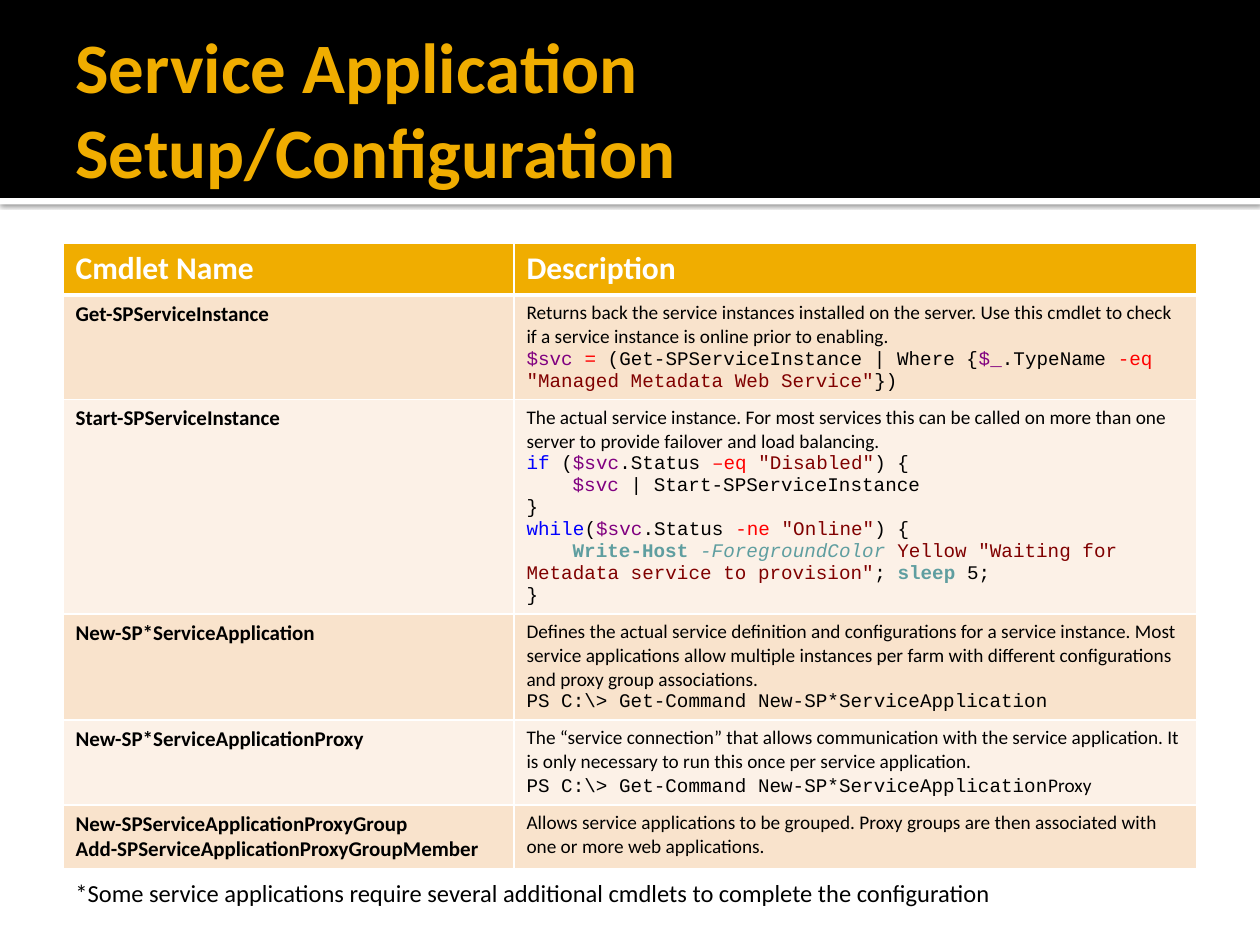
import pptx
import pptx.dml.color
import pptx.enum.shapes
import pptx.enum.text
import pptx.oxml
import pptx.oxml.ns
import pptx.util
from pptx.util import Cm

GOLD, WHITE, BLACK = "F0AD00", "FFFFFF", "000000"
BANDS = ("F9E3CC", "FCF1E7")
CODE_INDENT = Cm(0.93)  # four characters of 11 pt code

# Kinds of text: font, size, bold, italic, colour
KINDS = {
    "title": ("Calibri", 40.5, True, False, GOLD),
    "head": ("Calibri", 18, True, False, WHITE),
    "name": ("Calibri", 12, True, False, BLACK),
    "prose": ("Calibri", 11, False, False, BLACK),
    "note": ("Calibri", 14, False, False, BLACK),
    "code": ("Courier New", 11, False, False, BLACK),
    "variable": ("Courier New", 11, False, False, "800080"),
    "operator": ("Courier New", 11, False, False, "FF0000"),
    "string": ("Courier New", 11, False, False, "800000"),
    "keyword": ("Courier New", 11, False, False, "0000FF"),
    "command": ("Courier New", 11, True, False, "5F9EA0"),
    "option": ("Courier New", 11, False, True, "5F9EA0"),
}

# Each row: cmdlet names, then description lines made of (kind, text) spans;
# a line that starts with None is indented
ROWS = [
    (["Get-SPServiceInstance"], [
        [("prose", "Returns back the service instances installed on the server. "
                   "Use this cmdlet to check if a service instance is online prior to enabling.")],
        [("variable", "$svc "), ("operator", "="),
         ("code", " (Get-SPServiceInstance | Where {"), ("variable", "$_"),
         ("code", ".TypeName "), ("operator", "-eq "),
         ("string", '"Managed Metadata Web Service"'), ("code", "})")],
    ]),
    (["Start-SPServiceInstance"], [
        [("prose", "The actual service instance. For most services this can be called "
                   "on more than one server to provide failover and load balancing.")],
        [("keyword", "if "), ("code", "("), ("variable", "$svc"), ("code", ".Status "),
         ("operator", "–eq "), ("string", '"Disabled"'), ("code", ") {")],
        [None, ("variable", "$svc"), ("code", " | Start-SPServiceInstance")],
        [("code", "}")],
        [("keyword", "while"), ("code", "("), ("variable", "$svc"), ("code", ".Status "),
         ("operator", "-ne "), ("string", '"Online"'), ("code", ") {")],
        [None, ("command", "Write-Host "), ("option", "-ForegroundColor "),
         ("string", 'Yellow "Waiting for Metadata service to provision"'),
         ("code", "; "), ("command", "sleep"), ("code", " 5;")],
        [("code", "}")],
    ]),
    (["New-SP*ServiceApplication"], [
        [("prose", "Defines the actual service definition and configurations for a service "
                   "instance. Most service applications allow multiple instances per farm "
                   "with different configurations and proxy group associations.")],
        [("code", "PS C:\\> Get-Command New-SP*ServiceApplication")],
    ]),
    (["New-SP*ServiceApplicationProxy"], [
        [("prose", "The “service connection” that allows communication with the service "
                   "application. It is only necessary to run this once per service application.")],
        [("code", "PS C:\\> Get-Command New-SP*ServiceApplication"), ("prose", "Proxy")],
    ]),
    (["New-SPServiceApplicationProxyGroup", "Add-SPServiceApplicationProxyGroupMember"], [
        [("prose", "Allows service applications to be grouped. Proxy groups are then "
                   "associated with one or more web applications.")],
    ]),
]


def colour(value):
    return pptx.dml.color.RGBColor.from_string(value)


def drawing_xml(markup):
    """Parse one element of the drawing namespace."""
    tag, rest = markup[1:].split(" ", 1)
    return pptx.oxml.parse_xml(f"<{tag} {pptx.oxml.ns.nsdecls('a')} {rest}")


def write(frame, lines):
    """Fill a text frame with lines of (kind, text) spans."""
    for number, line in enumerate(lines):
        para = frame.add_paragraph() if number else frame.paragraphs[0]
        para.alignment = pptx.enum.text.PP_ALIGN.LEFT
        if line[0] is None:
            para._p.get_or_add_pPr().set("indent", str(CODE_INDENT))
            line = line[1:]
        for kind, text in line:
            span = para.add_run()
            span.text = text
            font = span.font
            font.name, size, font.bold, font.italic, shade = KINDS[kind]
            font.size = pptx.util.Pt(size)
            font.color.rgb = colour(shade)


def add_bar(page, left, top, width, height, fill):
    bar = page.shapes.add_shape(pptx.enum.shapes.MSO_SHAPE.RECTANGLE, left, top, width, height)
    bar.shadow.inherit = False
    bar.fill.solid()
    bar.fill.fore_color.rgb = colour(fill)
    bar.line.fill.background()
    return bar


def add_header(page, left, top, width, height):
    # White rule with a soft shadow, below the black band
    rule = add_bar(page, left, top + height, width, Cm(0.13), WHITE)
    effects = rule._element.spPr.find(pptx.oxml.ns.qn("a:effectLst"))
    effects.append(drawing_xml(
        '<a:outerShdw blurRad="31750" dist="10160" dir="5400000" algn="tl" rotWithShape="0">'
        f'<a:srgbClr val="{BLACK}"><a:alpha val="60000"/></a:srgbClr></a:outerShdw>'))
    add_bar(page, left, top, width, height, BLACK)

    # Title, brought in front of the band
    title = page.shapes.title
    page.shapes._spTree.append(title._element)
    title.left, title.top = left + Cm(1.27), top + Cm(0.43)
    title.width, title.height = width - Cm(2.54), Cm(3.48)
    frame = title.text_frame
    frame.word_wrap = True
    frame.auto_size = pptx.enum.text.MSO_AUTO_SIZE.NONE
    frame.vertical_anchor = pptx.enum.text.MSO_ANCHOR.MIDDLE
    frame.margin_left = Cm(0.25)
    frame.margin_right = frame.margin_top = frame.margin_bottom = Cm(0.13)
    write(frame, [[("title", "Service Application Setup/Configuration")]])


def style_cell(cell, fill, bottom=1, top=1):
    cell.fill.solid()
    cell.fill.fore_color.rgb = colour(fill)
    edges = (("lnL", 1), ("lnR", 1), ("lnT", top), ("lnB", bottom))
    for position, (edge, points) in enumerate(edges):
        cell._tc.get_or_add_tcPr().insert(position, drawing_xml(
            f'<a:{edge} w="{pptx.util.Pt(points)}"><a:solidFill>'
            f'<a:srgbClr val="{WHITE}"/></a:solidFill></a:{edge}>'))


def add_cmdlet_table(page, left, top, width, name_width):
    row_height = Cm(1.04)  # rows grow with their text
    count = len(ROWS) + 1
    table = page.shapes.add_table(count, 2, left, top, width, row_height * count).table
    table.columns[0].width = name_width
    table.columns[1].width = width - name_width
    for row in table.rows:
        row.height = row_height

    # Heading row
    for column, heading in enumerate(("Cmdlet Name", "Description")):
        cell = table.cell(0, column)
        write(cell.text_frame, [[("head", heading)]])
        style_cell(cell, GOLD, bottom=3)

    # Cmdlet rows in alternating bands
    for number, (names, description) in enumerate(ROWS):
        contents = ([[("name", name)] for name in names], description)
        for column, lines in enumerate(contents):
            cell = table.cell(number + 1, column)
            write(cell.text_frame, lines)
            style_cell(cell, BANDS[number % 2], top=1 if number else 3)


def add_footnote(page, left, top, width, height):
    box = page.shapes.add_textbox(left, top, width, height)
    box.text_frame.word_wrap = True
    write(box.text_frame, [[("note", "*Some service applications require several additional "
                                     "cmdlets to complete the configuration")]])


def main():
    deck = pptx.Presentation()
    deck.slide_width, deck.slide_height = Cm(25.4), Cm(19.05)
    page = deck.slides.add_slide(deck.slide_layouts[5])
    add_header(page, 0, 0, deck.slide_width, Cm(3.99))
    add_cmdlet_table(page, Cm(1.27), Cm(4.91), Cm(22.86), Cm(9.09))
    add_footnote(page, Cm(1.27), Cm(17.58), Cm(22.86), Cm(1.07))
    deck.save("out.pptx")


if __name__ == "__main__":
    main()
